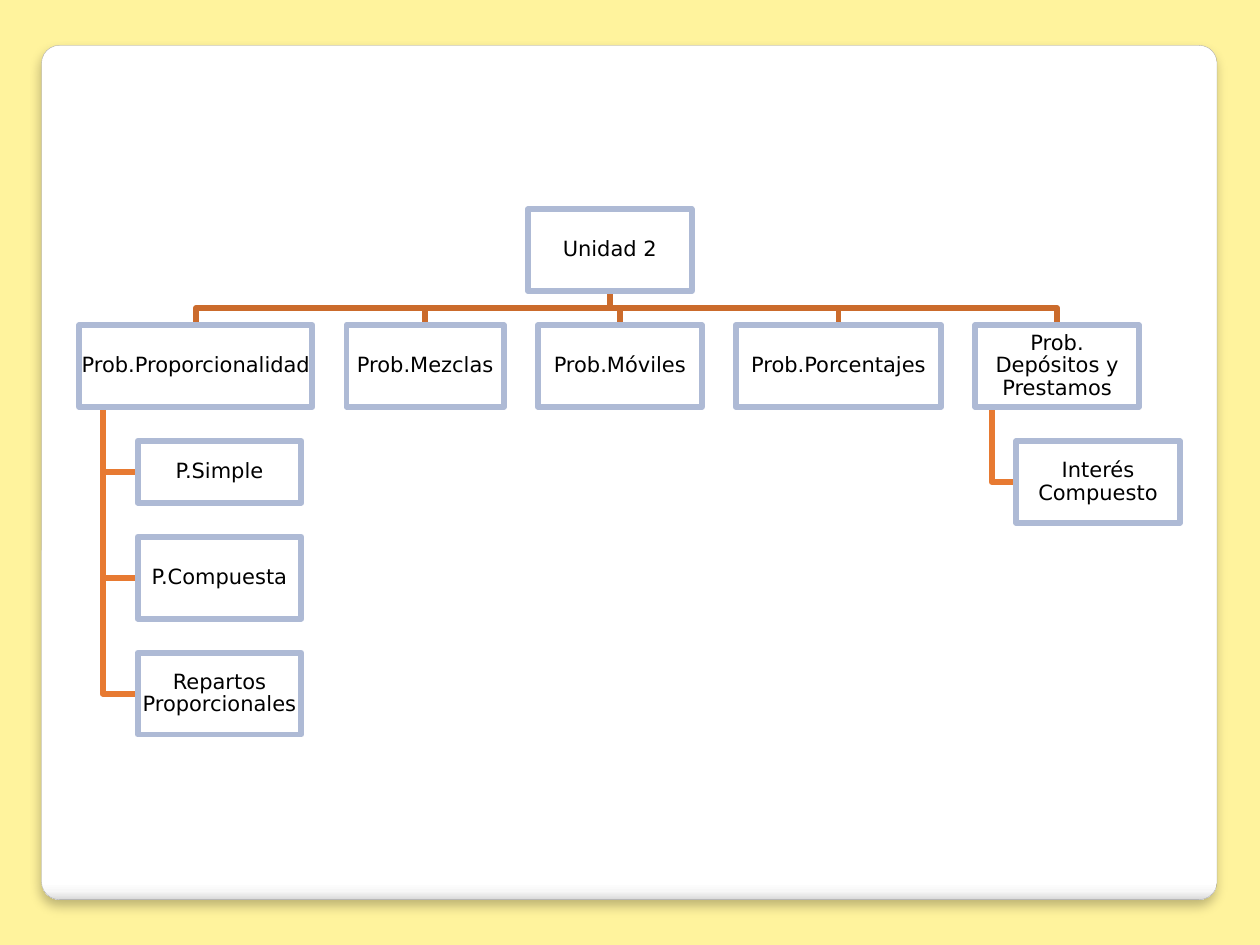
from lxml import etree
from pptx import Presentation
from pptx.dml.color import RGBColor
from pptx.enum.shapes import MSO_SHAPE
from pptx.enum.text import MSO_ANCHOR, PP_ALIGN
from pptx.oxml import parse_xml
from pptx.oxml.ns import qn
from pptx.util import Inches, Pt

RECT, ROUND = MSO_SHAPE.RECTANGLE, MSO_SHAPE.ROUNDED_RECTANGLE
MIDDLE, CENTER = MSO_ANCHOR.MIDDLE, PP_ALIGN.CENTER
A_NS = "http://schemas.openxmlformats.org/drawingml/2006/main"

BOX_W, BOX_H, GAP = 1.3, 0.65, 0.27
SPINE, INDENT = 0.10, 0.25  # shares of the parent box's width
STROKE = 3.35
ROOT = ("Unidad 2", 4.19, 1.66)
# label, width, children as (label, height)
BRANCHES = [
    ("Prob.Proporcionalidad", 1.85, [("P.Simple", 0.49), ("P.Compuesta", BOX_H),
                                     ("Repartos Proporcionales", BOX_H)]),
    ("Prob.Mezclas", 1.25, []),
    ("Prob.Móviles", BOX_W, []),
    ("Prob.Porcentajes", 1.63, []),
    ("Prob. Depósitos y Prestamos", BOX_W, [("Interés Compuesto", BOX_H)]),
]
BRANCH_LEFT = 0.63


def rgb(value):
    return RGBColor.from_string(value)


def add_panel(slide, x, y, w, h):
    """Rounded white card with a shaded lower edge and a soft shadow."""
    sp = slide.shapes.add_shape(ROUND, *map(Inches, (x, y, w, h)))
    sp.adjustments[0] = 0.021
    stops = [(0, "FFFFFF"), (98, "FFFFFF"), (99, "F7F7F7"), (100, "DADADA")]
    gs = "".join(f'<a:gs pos="{pos * 1000}"><a:srgbClr val="{c}"/></a:gs>' for pos, c in stops)
    sp.fill.gradient()
    grad = sp._element.spPr.find(qn("a:gradFill"))
    grad.getparent().replace(grad, parse_xml(
        f'<a:gradFill xmlns:a="{A_NS}" rotWithShape="1"><a:gsLst>{gs}</a:gsLst>'
        '<a:lin ang="5400000" scaled="0"/></a:gradFill>'))
    sp.line.color.rgb = rgb("A4A4A4")
    sp.line.width = Pt(0.16)
    sp.shadow.inherit = False
    effects = sp._element.spPr.find(qn("a:effectLst"))
    shadow = etree.SubElement(effects, qn("a:outerShdw"), blurRad=str(Pt(6)),
                              dist=str(Pt(4)), dir="5400000", algn="t", rotWithShape="0")
    color = etree.SubElement(shadow, qn("a:srgbClr"), val="000000")
    etree.SubElement(color, qn("a:alpha"), val="25000")


def add_box(slide, label, x, y, w, h):
    sp = slide.shapes.add_shape(RECT, *map(Inches, (x, y, w, h)))
    sp.shadow.inherit = False
    sp.fill.solid()
    sp.fill.fore_color.rgb = rgb("FFFFFF")
    sp.line.color.rgb = rgb("AEBAD5")
    sp.line.width = Pt(STROKE)
    tf = sp.text_frame
    tf.word_wrap = True
    tf.vertical_anchor = MIDDLE
    tf.margin_left = tf.margin_right = tf.margin_top = tf.margin_bottom = Inches(0.01)
    tf.text = label
    p = tf.paragraphs[0]
    p.alignment = CENTER
    p.line_spacing = 0.9
    r = p.runs[0]
    r.font.size = Pt(12)
    r.font.name = "DejaVu Sans"
    r.font.color.rgb = rgb("000000")


def add_elbow(slide, points, color):
    start, *rest = [(Inches(x), Inches(y)) for x, y in points]
    builder = slide.shapes.build_freeform(*start)
    builder.add_line_segments(rest, close=False)
    sp = builder.convert_to_shape()
    sp.shadow.inherit = False
    sp.fill.background()
    sp.line.color.rgb = rgb(color)
    sp.line.width = Pt(STROKE)


def add_children(slide, children, x, y, w):
    """Stack children below a parent whose bottom edge starts at x, y and is w wide."""
    spine, left, top = x + SPINE * w, x + INDENT * w, y + GAP
    for label, h in children:
        mid = top + h / 2
        add_elbow(slide, [(spine, y), (spine, mid), (left, mid)], "E77A32")
        add_box(slide, label, left, top, BOX_W, h)
        top += h + GAP


def add_tree(slide, root, branches, left):
    label, root_x, root_y = root
    stem, root_bottom = root_x + BOX_W / 2, root_y + BOX_H
    bus, top = root_bottom + GAP / 2, root_bottom + GAP
    x = left
    for name, w, children in branches:
        mid = x + w / 2
        add_elbow(slide, [(stem, root_bottom), (stem, bus), (mid, bus), (mid, top)], "CB6B2C")
        add_children(slide, children, x, top + BOX_H, w)
        add_box(slide, name, x, top, w, BOX_H)
        x += w + GAP
    add_box(slide, label, root_x, root_y, BOX_W, BOX_H)


def main():
    prs = Presentation()
    prs.slide_width, prs.slide_height = Inches(10), Inches(7.5)
    slide = prs.slides.add_slide(prs.slide_layouts[6])
    slide.background.fill.solid()
    slide.background.fill.fore_color.rgb = rgb("FFF39D")
    add_panel(slide, 0.33, 0.36, 9.33, 6.78)
    add_tree(slide, ROOT, BRANCHES, BRANCH_LEFT)
    prs.save("out.pptx")


if __name__ == "__main__":
    main()
